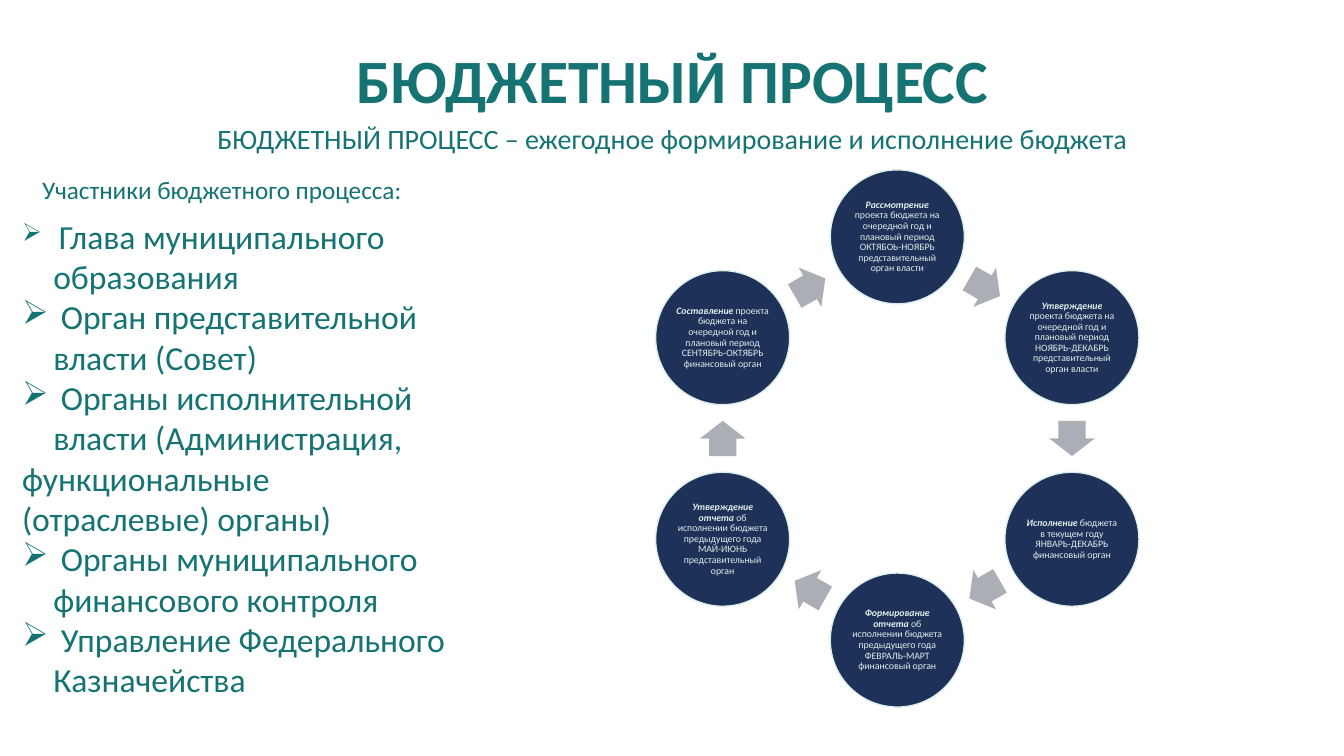
from math import cos, radians, sin

from lxml.etree import SubElement
from pptx import Presentation
from pptx.dml.color import RGBColor
from pptx.enum.shapes import MSO_SHAPE
from pptx.enum.text import MSO_ANCHOR, PP_ALIGN
from pptx.oxml.ns import qn
from pptx.util import Pt

PX = 9144  # EMU, 100 px to the inch
COLORS = {"teal": "167373", "navy": "1E3259", "mint": "DCEFEB", "grey": "ACAEB5"}
FONT = "Calibri"

TITLE = "БЮДЖЕТНЫЙ ПРОЦЕСС"
SUBTITLE = "БЮДЖЕТНЫЙ ПРОЦЕСС – ежегодное формирование и исполнение бюджета"
PARTICIPANTS_HEADING = "Участники бюджетного процесса:"
# (bulleted, [(text, size), ...])
PARTICIPANTS = [
    (True, [(" ", 18), ("Глава муниципального образования", 24)]),
    (True, [(" Орган представительной власти (Совет)", 24)]),
    (True, [(" Органы исполнительной власти (Администрация,", 24)]),
    (False, [("функциональные (отраслевые) органы)", 24)]),
    (True, [(" Органы муниципального финансового контроля", 24)]),
    (True, [(" Управление Федерального Казначейства", 24)]),
]
# Clockwise from the top: (stage, details)
STAGES = [
    ("Рассмотрение", " проекта бюджета на очередной год и плановый период "
     "ОКТЯБОЬ-НОЯБРЬ представительный орган власти"),
    ("Утверждение", " проекта бюджета на очередной год и плановый период "
     "НОЯБРЬ-ДЕКАБРЬ представительный орган власти"),
    ("Исполнение ", "бюджета в текущем году ЯНВАРЬ-ДЕКАБРЬ финансовый орган"),
    ("Формирование отчета ", "об исполнении бюджета предыдущего года "
     "ФЕВРАЛЬ-МАРТ финансовый орган"),
    ("Утверждение отчета ", "об исполнении бюджета предыдущего года "
     "МАЙ-ИЮНЬ представительный орган"),
    ("Составление ", "проекта бюджета на очередной год и плановый период "
     "СЕНТЯБРЬ-ОКТЯБРЬ финансовый орган"),
]

RING_X, RING_Y, RING_RADIUS = 890, 435, 200
CIRCLE = 133
ARROW_W, ARROW_H = 35, 45
BULLET_INDENT = 31


def emu(*lengths):
    return [round(length * PX) for length in lengths]


def rgb(name):
    return RGBColor.from_string(COLORS[name])


def add_run(paragraph, text, size, color="teal", bold=False, italic=False):
    run = paragraph.add_run()
    run.text = text
    font = run.font
    font.name, font.size, font.bold, font.italic = FONT, Pt(size), bold, italic
    font.color.rgb = rgb(color)


def add_text_frame(slide, left, top, width, height, wrap=True):
    frame = slide.shapes.add_textbox(*emu(left, top, width, height)).text_frame
    frame.word_wrap = wrap
    return frame


def center(paragraph):
    paragraph.alignment = PP_ALIGN.CENTER
    paragraph.line_spacing = 0.9


def add_bullet(paragraph):
    properties = paragraph._p.get_or_add_pPr()
    indent, = emu(BULLET_INDENT)
    properties.set("marL", str(indent))
    properties.set("indent", str(-indent))
    SubElement(properties, qn("a:buChar")).set("char", "➢")


def add_centered(slide, shape_kind, x, y, width, height, fill):
    """Add a filled preset shape around the point x, y."""
    shape = slide.shapes.add_shape(
        shape_kind, *emu(x - width / 2, y - height / 2, width, height))
    shape.shadow.inherit = False
    shape.fill.solid()
    shape.fill.fore_color.rgb = rgb(fill)
    return shape


def add_heading(slide):
    title = add_text_frame(slide, 47, 26, 1240, 113)
    title.vertical_anchor = MSO_ANCHOR.MIDDLE
    center(title.paragraphs[0])
    add_run(title.paragraphs[0], TITLE, 44, bold=True)

    subtitle = add_text_frame(slide, 47, 119, 1240, 69).paragraphs[0]
    center(subtitle)
    add_run(subtitle, SUBTITLE, 20)


def add_participants(slide):
    heading = add_text_frame(slide, 32, 168, 381, 40, wrap=False)
    add_run(heading.paragraphs[0], PARTICIPANTS_HEADING, 18)

    participants = add_text_frame(slide, 12, 209, 448, 495)
    for index, (bulleted, runs) in enumerate(PARTICIPANTS):
        paragraph = participants.add_paragraph() if index else participants.paragraphs[0]
        if bulleted:
            add_bullet(paragraph)
        for text, size in runs:
            add_run(paragraph, text, size)


def add_stage(slide, x, y, stage, details):
    circle = add_centered(slide, MSO_SHAPE.OVAL, x, y, CIRCLE, CIRCLE, "navy")
    circle.line.color.rgb = rgb("mint")
    circle.line.width = Pt(1)
    frame = circle.text_frame
    frame.word_wrap = True
    frame.vertical_anchor = MSO_ANCHOR.MIDDLE
    (frame.margin_left, frame.margin_top,
     frame.margin_right, frame.margin_bottom) = emu(1, 1, 1, 1)
    center(frame.paragraphs[0])
    add_run(frame.paragraphs[0], stage, 7, "mint", bold=True, italic=True)
    add_run(frame.paragraphs[0], details, 7, "mint")


def add_cycle(slide):
    step = 360 / len(STAGES)
    arrow_radius = RING_RADIUS * cos(radians(step / 2))
    for index, (stage, details) in enumerate(STAGES):
        angle = index * step - 90
        add_stage(slide, RING_X + RING_RADIUS * cos(radians(angle)),
                  RING_Y + RING_RADIUS * sin(radians(angle)), stage, details)

        middle = angle + step / 2
        arrow = add_centered(
            slide, MSO_SHAPE.RIGHT_ARROW,
            RING_X + arrow_radius * cos(radians(middle)),
            RING_Y + arrow_radius * sin(radians(middle)),
            ARROW_W, ARROW_H, "grey")
        arrow.rotation = middle + 90
        arrow.adjustments[0], arrow.adjustments[1] = 0.6, 0.5
        arrow.line.fill.background()


def main():
    presentation = Presentation()
    presentation.slide_width, presentation.slide_height = emu(1333, 750)
    slide = presentation.slides.add_slide(presentation.slide_layouts[6])
    add_heading(slide)
    add_participants(slide)
    add_cycle(slide)
    presentation.save("out.pptx")


if __name__ == "__main__":
    main()
